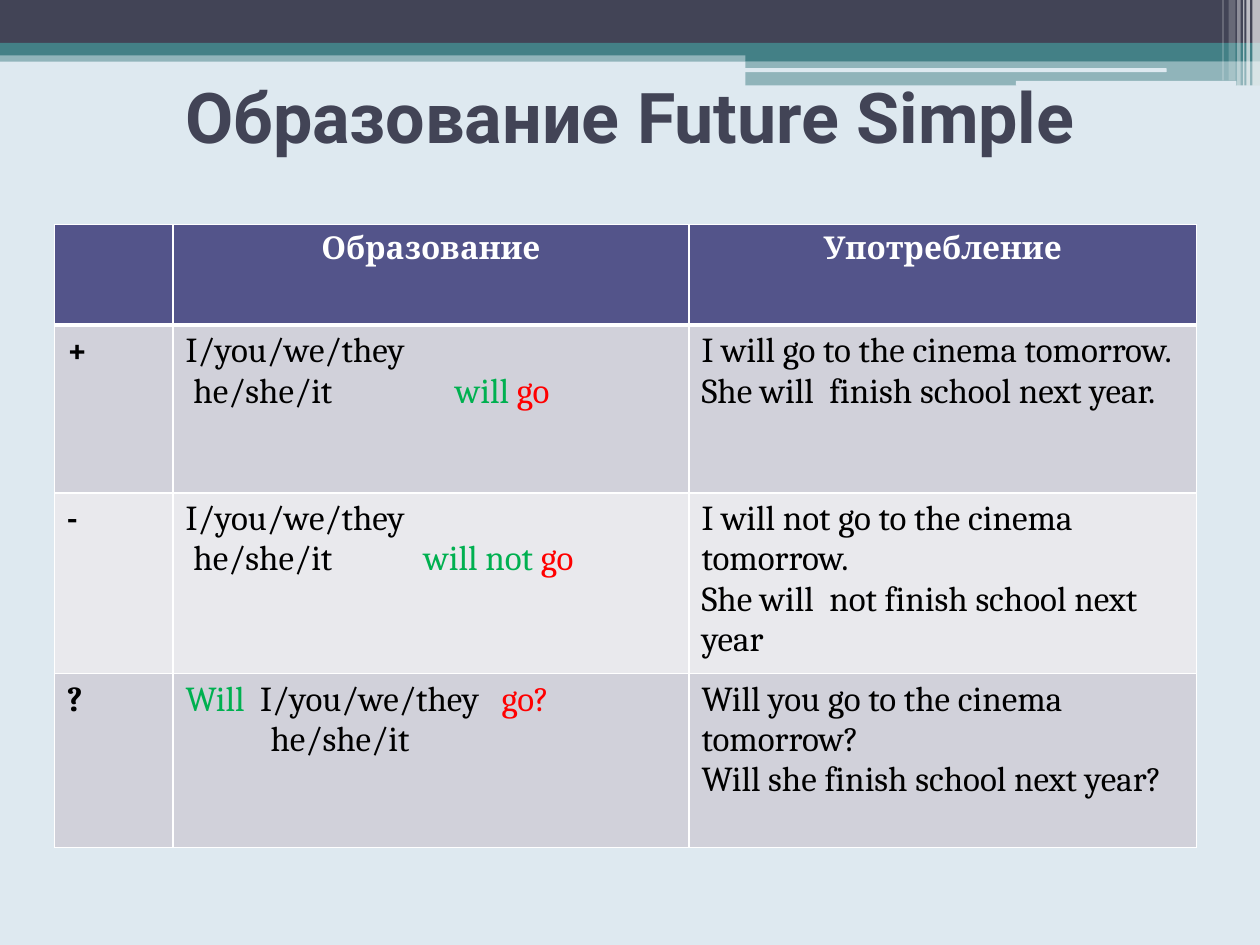
from lxml import etree
from pptx import Presentation
from pptx.dml.color import RGBColor
from pptx.enum.shapes import MSO_SHAPE
from pptx.enum.text import MSO_ANCHOR, PP_ALIGN
from pptx.oxml.ns import qn
from pptx.util import Pt

RECT = MSO_SHAPE.RECTANGLE
ROUNDED = MSO_SHAPE.ROUNDED_RECTANGLE
CENTER = PP_ALIGN.CENTER
MIDDLE = MSO_ANCHOR.MIDDLE

COLORS = {
    "background": "DEE9F0", "navy": "424456", "teal": "438086",
    "white": "FFFFFF", "header": "53548A", "odd": "D1D1DA",
    "even": "E9E9ED", "black": "000000", "green": "00B050", "red": "FF0000",
}

BANDS = [
    (RECT, 0, 28.8, 720, 6.5, "teal", 50),
    (RECT, 0, 0, 720, 24.5, "navy", 100),
    (RECT, 0, 24.5, 720, 7.2, "teal", 100),
    (RECT, 426, 28, 294, 7, "teal", 100),
    (RECT, 426, 34.6, 294, 14.2, "teal", 50),
    (ROUNDED, 425.5, 39, 241.2, 2.2, "background", 100),
    (ROUNDED, 580.5, 46.2, 126, 2.8, "background", 100),
]
STRIPES = [
    (715.6, 4.4, 49, 65), (712.2, 2, 49, 65), (710.4, 0.8, 49, 60),
    (707, 2, 49, 40), (702, 4, 46, 20), (698.5, 0.8, 46, 30),
]

COLUMNS = [67.9, 294.8, 290.2]
ROWS = [57.6, 95.8, 99.4, 99.4]
HEADINGS = ["", "Образование", "Употребление"]
FORMS = [
    ("+",
     [{"runs": [("I/you/we/they", "black")]},
      {"runs": [(" he/she/it\t", "black"), ("will ", "green"), ("go", "red")],
       "tab": 154}],
     ["I will go to the cinema tomorrow.",
      "She will  finish school next year."]),
    ("-",
     [{"runs": [("I/you/we/they", "black")]},
      {"runs": [(" he/she/it\t", "black"), ("will not ", "green"), ("go", "red")],
       "tab": 136}],
     ["I will not go to the cinema tomorrow.",
      "She will  not finish school next year"]),
    ("?",
     [{"runs": [("Will  ", "green"), ("I/you/we/they\t", "black"), ("go?", "red")],
       "tab": 180.5},
      {"runs": [("he/she/it", "black")], "indent": 48.5}],
     ["Will you go to the cinema tomorrow?",
      "Will she finish school next year?"]),
]


def rgb(color):
    return RGBColor.from_string(COLORS[color])


def add_band(slide, kind, left, top, width, height, color, opacity):
    band = slide.shapes.add_shape(kind, Pt(left), Pt(top), Pt(width), Pt(height))
    band.shadow.inherit = False
    band.line.fill.background()
    band.fill.solid()
    band.fill.fore_color.rgb = rgb(color)
    if opacity < 100:
        tint = band.fill._xPr.find(qn("a:solidFill"))[0]
        etree.SubElement(tint, qn("a:alpha"), val=str(opacity * 1000))


def add_header_decor(slide):
    for band in BANDS:
        add_band(slide, *band)
    for left, width, height, opacity in STRIPES:
        add_band(slide, RECT, left, 0, width, height, "white", opacity)


def add_run(paragraph, text, font, size, color, bold=False):
    run = paragraph.add_run()
    run.text = text
    run.font.name = font
    run.font.size = Pt(size)
    run.font.bold = bold
    run.font.color.rgb = rgb(color)


def add_title(slide, left, top, width, height):
    title = slide.shapes.add_textbox(Pt(left), Pt(top), Pt(width), Pt(height))
    frame = title.text_frame
    frame.word_wrap = True
    frame.vertical_anchor = MIDDLE
    heading = frame.paragraphs[0]
    heading.alignment = CENTER
    add_run(heading, "Образование Future Simple", "Roboto", 40, "navy", True)


def style_cell(cell, fill, bottom=1):
    cell.fill.solid()
    cell.fill.fore_color.rgb = rgb(fill)
    properties = cell._tc.get_or_add_tcPr()
    edges = [("lnL", 1), ("lnR", 1), ("lnT", 1), ("lnB", bottom)]
    for position, (edge, weight) in enumerate(edges):
        border = etree.Element(qn(f"a:{edge}"), w=str(Pt(weight)))
        paint = etree.SubElement(border, qn("a:solidFill"))
        etree.SubElement(paint, qn("a:srgbClr"), val=COLORS["white"])
        properties.insert(position, border)


def write_lines(cell, lines, size=20, bold=False, align=None):
    frame = cell.text_frame
    for index, line in enumerate(lines):
        paragraph = frame.add_paragraph() if index else frame.paragraphs[0]
        paragraph.alignment = align
        properties = paragraph._p.get_or_add_pPr()
        if "indent" in line:
            properties.set("marL", str(Pt(line["indent"])))
        if "tab" in line:
            stops = etree.SubElement(properties, qn("a:tabLst"))
            etree.SubElement(stops, qn("a:tab"), pos=str(Pt(line["tab"])), algn="l")
        for text, color in line["runs"]:
            add_run(paragraph, text, "Cambria", size, color, bold)


def add_tense_table(slide, left, top):
    table = slide.shapes.add_table(
        len(ROWS), len(COLUMNS), Pt(left), Pt(top),
        Pt(sum(COLUMNS)), Pt(sum(ROWS))).table
    for column, width in zip(table.columns, COLUMNS):
        column.width = Pt(width)
    for row, height in zip(table.rows, ROWS):
        row.height = Pt(height)

    for column, heading in enumerate(HEADINGS):
        cell = table.cell(0, column)
        style_cell(cell, "header", bottom=3)
        if heading:
            write_lines(cell, [{"runs": [(heading, "white")]}], 18, True, CENTER)

    for row, (sign, formation, examples) in enumerate(FORMS, 1):
        usage = [{"runs": [(example, "black")]} for example in examples]
        contents = [[{"runs": [(sign, "black")]}], formation, usage]
        for column, lines in enumerate(contents):
            cell = table.cell(row, column)
            style_cell(cell, "odd" if row % 2 else "even")
            write_lines(cell, lines, bold=column == 0)


def main():
    deck = Presentation()
    deck.slide_width, deck.slide_height = Pt(720), Pt(540)
    slide = deck.slides.add_slide(deck.slide_layouts[6])
    slide.background.fill.solid()
    slide.background.fill.fore_color.rgb = rgb("background")
    add_header_decor(slide)
    add_title(slide, 36, 15.1, 648, 102.2)
    add_tense_table(slide, 31, 128.2)
    deck.save("out.pptx")


if __name__ == "__main__":
    main()
